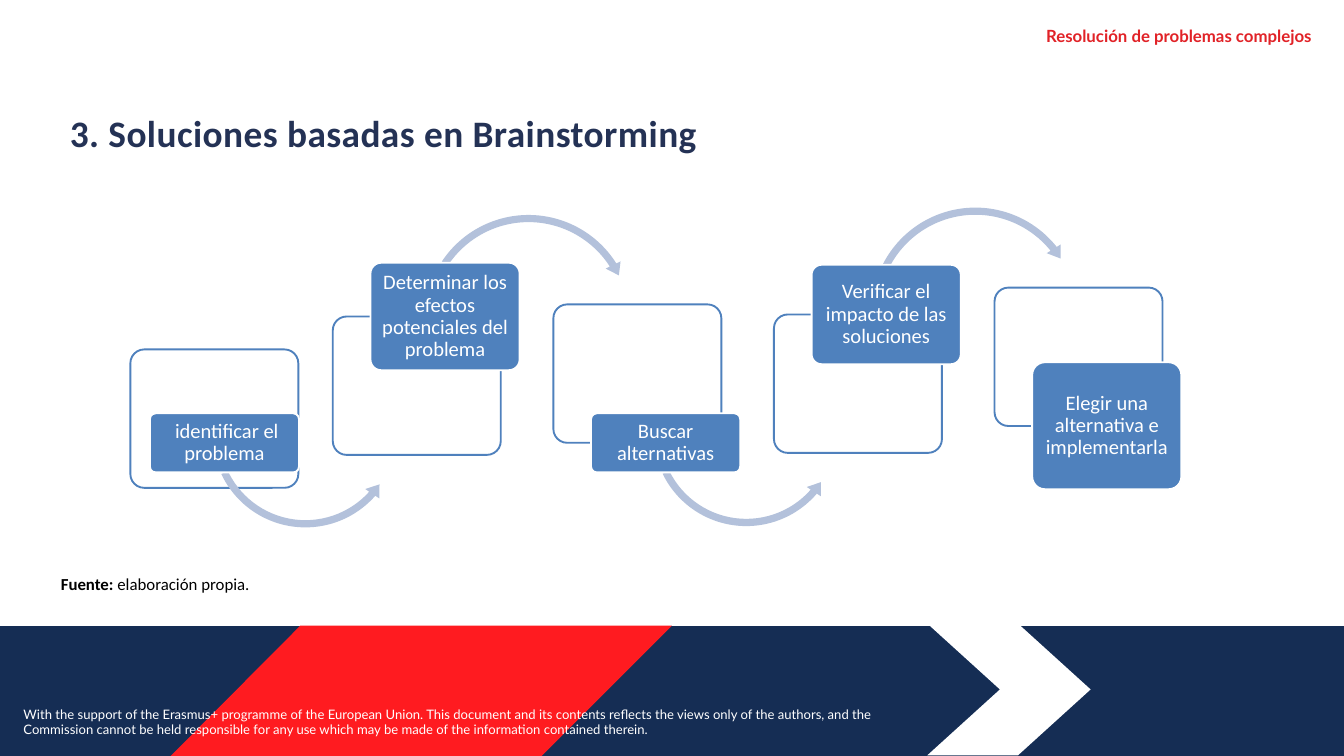
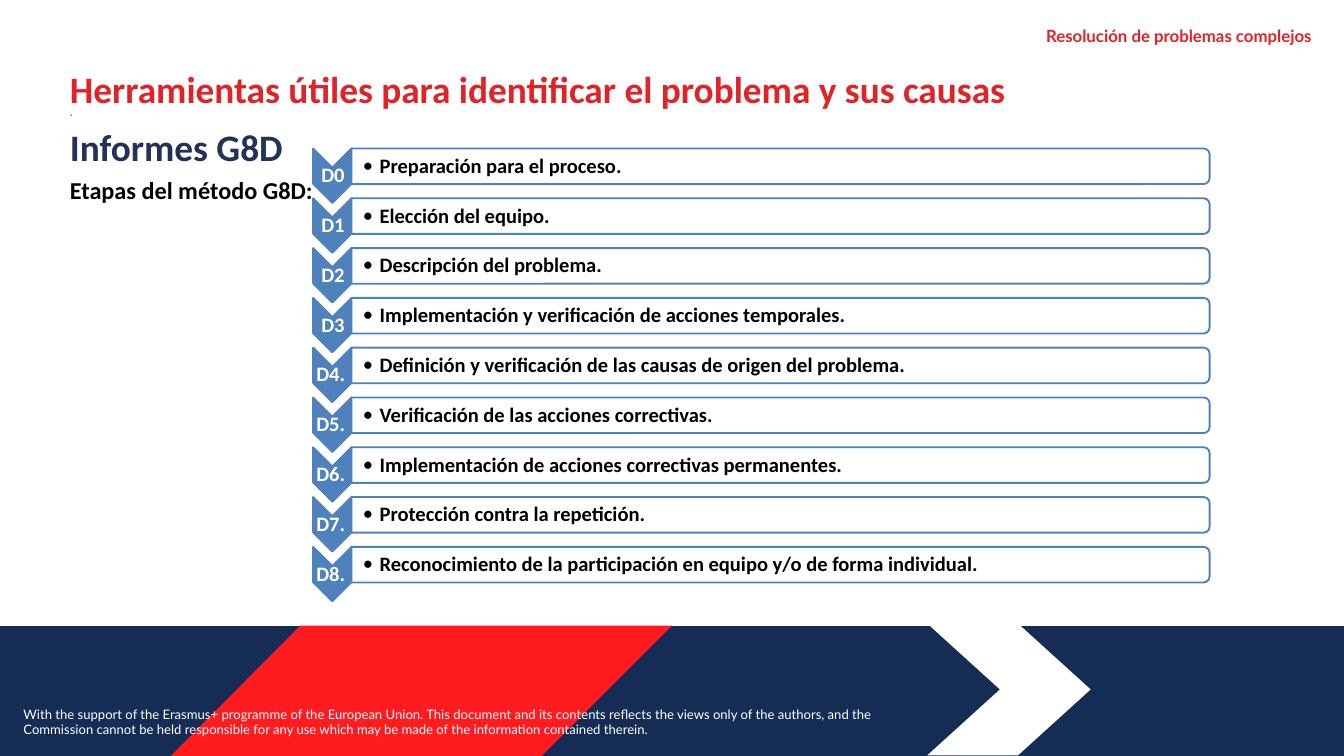
from dataclasses import dataclass
from typing import NamedTuple, Optional, Sequence

from lxml import etree
from pptx import Presentation
from pptx.dml.color import RGBColor
from pptx.enum.shapes import MSO_SHAPE
from pptx.enum.text import MSO_ANCHOR, PP_ALIGN
from pptx.oxml.ns import qn
from pptx.util import Inches, Pt

ROUNDED = MSO_SHAPE.ROUNDED_RECTANGLE
TWO_ROUNDED = MSO_SHAPE.ROUND_2_SAME_RECTANGLE
CHEVRON = MSO_SHAPE.CHEVRON
ARROW_OVER = MSO_SHAPE.CIRCULAR_ARROW
ARROW_UNDER = MSO_SHAPE.LEFT_CIRCULAR_ARROW
LEFT, CENTER, RIGHT = PP_ALIGN.LEFT, PP_ALIGN.CENTER, PP_ALIGN.RIGHT
TOP, MIDDLE = MSO_ANCHOR.TOP, MSO_ANCHOR.MIDDLE

COLORS = {
    "navy": "152D54",
    "title": "243255",
    "red": "FF1B20",
    "heading": "E12227",
    "blue": "4F81BD",
    "arrow": "B3C1DB",
    "white": "FFFFFF",
    "black": "000000",
}

SLIDE_WIDTH, SLIDE_HEIGHT = 20, 11.25
BAND_TOP = 9.31
HEADER = "Resolución de problemas complejos"
DISCLAIMER = (
    "With the support of the Erasmus+ programme of the European Union. "
    "This document and its contents reflects the views only of the authors, and the "
    "Commission cannot be held responsible for any use which may be made of the "
    "information contained therein."
)


class Box(NamedTuple):
    left: float
    top: float
    width: float
    height: float


@dataclass(frozen=True)
class Run:
    text: str
    size: float
    color: str
    bold: bool = False
    font: str = "Calibri"
    spacing: float = 0


@dataclass(frozen=True)
class Line:
    """One paragraph: its runs and the points of space after it."""
    runs: Sequence[Run]
    after: float = 0


@dataclass(frozen=True)
class Arc:
    """Curved arrow; angles are in degrees, clockwise from the right."""
    left: float
    top: float
    start: float
    end: float


@dataclass(frozen=True)
class ArcStyle:
    kind: MSO_SHAPE
    diameter: float
    thickness: float
    head_angle: float
    head_width: float


@dataclass(frozen=True)
class Step:
    text: str
    frame_top: float
    label_top: float
    label_height: float
    style: Optional[ArcStyle] = None
    arc: Optional[Arc] = None
    overhang: float = 0.56


UNDER = ArcStyle(ARROW_UNDER, 2.91, 0.037, 7.6, 0.043)
OVER = ArcStyle(ARROW_OVER, 3.23, 0.033, 6.79, 0.038)
STEPS = [
    Step(" identificar el problema", 5.2, 6.15, 0.88,
         UNDER, Arc(3.09, 5.01, 154.8, 41.57), overhang=0.29),
    Step("Determinar los efectos potenciales del problema", 4.71, 3.91, 1.6,
         OVER, Arc(6.25, 3.13, 213.51, 327.54)),
    Step("Buscar alternativas", 4.53, 6.15, 0.88,
         UNDER, Arc(9.65, 4.99, 154.1, 40.89)),
    Step("Verificar el impacto de las soluciones", 4.68, 3.94, 1.48,
         OVER, Arc(12.9, 3.02, 207.34, 321.36)),
    Step("Elegir una alternativa e implementarla", 4.28, 5.39, 1.89),
]
LABEL_LEFT, LABEL_PITCH = 2.23, 3.2825

STAGES = [
    ("D0", "Preparación para el proceso."),
    ("D1", "Elección del equipo."),
    ("D2", "Descripción del problema."),
    ("D3", "Implementación y verificación de acciones temporales."),
    ("D4. ", "Definición y verificación de las causas de origen del problema."),
    ("D5. ", "Verificación de las acciones correctivas."),
    ("D6. ", "Implementación de acciones correctivas permanentes."),
    ("D7. ", "Protección contra la repetición."),
    ("D8. ", "Reconocimiento de la participación en equipo y/o de forma individual."),
]
STAGE_TOP, STAGE_PITCH = 2.21, 0.741


def rgb(name: str) -> RGBColor:
    return RGBColor.from_string(COLORS[name])


def paint(shape, fill: str, line: Optional[str] = None, opacity: int = 100) -> None:
    shape.shadow.inherit = False
    shape.fill.solid()
    shape.fill.fore_color.rgb = rgb(fill)
    if opacity < 100:
        color = shape.fill._xPr.find(".//" + qn("a:srgbClr"))
        etree.SubElement(color, qn("a:alpha")).set("val", str(opacity * 1000))
    if line:
        shape.line.color.rgb = rgb(line)
        shape.line.width = Pt(2)
    else:
        shape.line.fill.background()


def add_shape(slide, kind, box: Box, fill: str, line: Optional[str] = None, *,
              opacity: int = 100, adjustments: Sequence[float] = (), turned: bool = False):
    """Draw a preset shape; when turned by 90 degrees, box is what it covers on the slide."""
    left, top, width, height = box
    if turned:
        left, top = left + (width - height) / 2, top + (height - width) / 2
        width, height = height, width
    shape = slide.shapes.add_shape(kind, *map(Inches, (left, top, width, height)))
    shape.rotation = 90 if turned else 0
    for index, value in enumerate(adjustments):
        shape.adjustments[index] = value
    paint(shape, fill, line, opacity)
    return shape


def add_polygon(slide, points: Sequence[tuple[float, float]], fill: str) -> None:
    corners = [(Inches(x), Inches(y)) for x, y in points]
    builder = slide.shapes.build_freeform(*corners[0])
    builder.add_line_segments(corners[1:], close=True)
    paint(builder.convert_to_shape(), fill)


def write(shape, lines: Sequence[Line], *, align=LEFT, anchor=TOP,
          insets: Sequence[float] = (0.1, 0.05, 0.1, 0.05), wrap: bool = True,
          before: float = 0, line_spacing: float = 1, indent: float = 0,
          bullet: bool = False) -> None:
    frame = shape.text_frame
    frame.word_wrap = wrap
    frame.vertical_anchor = anchor
    (frame.margin_left, frame.margin_top,
     frame.margin_right, frame.margin_bottom) = map(Inches, insets)
    for index, line in enumerate(lines):
        paragraph = frame.add_paragraph() if index else frame.paragraphs[0]
        paragraph.alignment = align
        paragraph.line_spacing = line_spacing
        paragraph.space_before, paragraph.space_after = Pt(before), Pt(line.after)
        properties = paragraph._p.get_or_add_pPr()
        properties.set("marL", str(Inches(indent)))
        if bullet:
            properties.set("indent", str(-Inches(indent)))
            etree.SubElement(properties, qn("a:buFont")).set("typeface", "Calibri")
            etree.SubElement(properties, qn("a:buChar")).set("char", "•")
        for part in line.runs:
            run = paragraph.add_run()
            run.text = part.text
            run.font.name = part.font
            run.font.size = Pt(part.size)
            run.font.bold = part.bold
            run.font.color.rgb = rgb(part.color)
            if part.spacing:
                run._r.get_or_add_rPr().set("spc", str(int(part.spacing * 100)))


def add_text(slide, box: Box, lines: Sequence[Line], **layout) -> None:
    write(slide.shapes.add_textbox(*map(Inches, box)), lines, **layout)


def add_title(slide, box: Box, lines: Sequence[Line]) -> None:
    add_text(slide, box, lines, insets=(0, 0.02, 0, 0), before=1.1, indent=0.01)


def add_base_slide(presentation):
    """Add a blank slide with the bottom band, the disclaimer and the header."""
    slide = presentation.slides.add_slide(presentation.slide_layouts[6])
    add_polygon(slide, [(0, BAND_TOP), (SLIDE_WIDTH, BAND_TOP),
                        (SLIDE_WIDTH, SLIDE_HEIGHT), (0, SLIDE_HEIGHT)], "navy")
    add_polygon(slide, [(15.15, 11.24), (13.8, 11.24), (14.88, 10.26),
                        (13.8, 9.28), (15.15, 9.28), (16.23, 10.26)], "white")
    add_polygon(slide, [(10, BAND_TOP), (8.06, SLIDE_HEIGHT),
                        (2.54, SLIDE_HEIGHT), (4.47, BAND_TOP)], "red")
    add_text(slide, Box(0.25, 10.46, 13.75, 0.57),
             [Line([Run(DISCLAIMER, 14, "white", font="Lato")])])
    add_text(slide, Box(9, 0.37, 10.52, 0.32),
             [Line([Run(HEADER, 18, "heading", bold=True, font="Lato")])],
             align=RIGHT, insets=(0, 0.01, 0, 0))
    return slide


def add_arc(slide, style: ArcStyle, arc: Arc) -> None:
    # Angles are stored in 60000ths of a degree, adjustments in 100000ths.
    angles = [angle * 0.6 for angle in (style.head_angle, arc.end, arc.start)]
    add_shape(slide, style.kind, Box(arc.left, arc.top, style.diameter, style.diameter),
              "arrow", adjustments=(style.thickness, *angles, style.head_width))


def add_step(slide, index: int, step: Step) -> None:
    label_left = LABEL_LEFT + index * LABEL_PITCH
    frame = Box(label_left - step.overhang, step.frame_top, 2.5, 2.06)
    add_shape(slide, ROUNDED, frame, "white", "blue", opacity=90, adjustments=(0.1,))
    if step.style and step.arc:
        add_arc(slide, step.style, step.arc)
    label = add_shape(slide, ROUNDED,
                      Box(label_left, step.label_top, 2.22, step.label_height),
                      "blue", "white", adjustments=(0.1,))
    write(label, [Line([Run(step.text, 22, "white")])], align=CENTER, anchor=MIDDLE,
          insets=(0.05, 0.03, 0.05, 0.03), line_spacing=0.9)


def add_stage(slide, index: int, code: str, text: str) -> None:
    top = STAGE_TOP + index * STAGE_PITCH
    add_shape(slide, CHEVRON, Box(4.66, top, 0.57, 0.81), "blue", "blue", turned=True)
    add_text(slide, Box(4.67, top + 0.29, 0.57, 0.24),
             [Line([Run(code, 22, "white", bold=True)])], align=CENTER, anchor=MIDDLE,
             insets=(0.02,) * 4, line_spacing=0.9)
    add_shape(slide, TWO_ROUNDED, Box(5.23, top, 12.77, 0.53), "white", "blue",
              opacity=90, turned=True)
    add_text(slide, Box(5.23, top + 0.03, 12.74, 0.48),
             [Line([Run(text, 22, "black", bold=True)])], anchor=MIDDLE,
             insets=(0.17, 0.02, 0.02, 0.02), line_spacing=0.9, indent=0.25, bullet=True)


def build_brainstorming(presentation) -> None:
    slide = add_base_slide(presentation)
    add_title(slide, Box(1.03, 1.62, 18.39, 1.91), [
        Line([Run("3. Soluciones basadas en Brainstorming", 40, "title", True, spacing=0.5)]),
    ])
    for index, step in enumerate(STEPS):
        add_step(slide, index, step)
    add_text(slide, Box(0.79, 8.49, 3.04, 0.4),
             [Line([Run("Fuente: ", 18, "black", bold=True),
                    Run("elaboración propia.", 18, "black")])], align=CENTER, wrap=False)


def build_g8d_report(presentation) -> None:
    slide = add_base_slide(presentation)
    add_title(slide, Box(1.03, 0.96, 18.14, 2.65), [
        Line([Run("Herramientas útiles para identificar el problema y sus causas",
                  40, "heading", True)]),
        Line([Run("`", 10, "title", True, spacing=0.5)]),
        Line([Run("Informes G8D", 40, "title", True)], after=6),
        Line([Run("Etapas del método G8D:", 26, "black", True)], after=6),
    ])
    for index, (code, text) in enumerate(STAGES):
        add_stage(slide, index, code, text)


def main() -> None:
    presentation = Presentation()
    presentation.slide_width = Inches(SLIDE_WIDTH)
    presentation.slide_height = Inches(SLIDE_HEIGHT)
    build_brainstorming(presentation)
    build_g8d_report(presentation)
    presentation.save("out.pptx")


if __name__ == "__main__":
    main()
